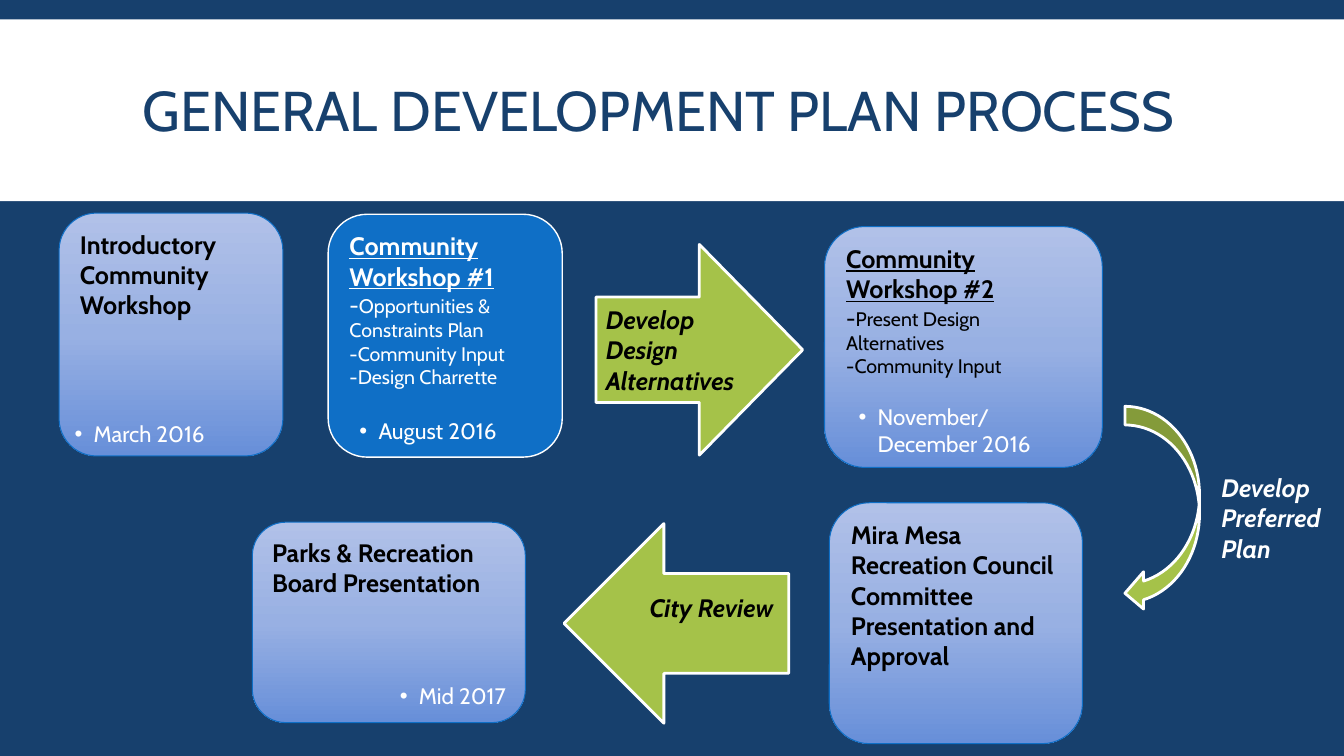
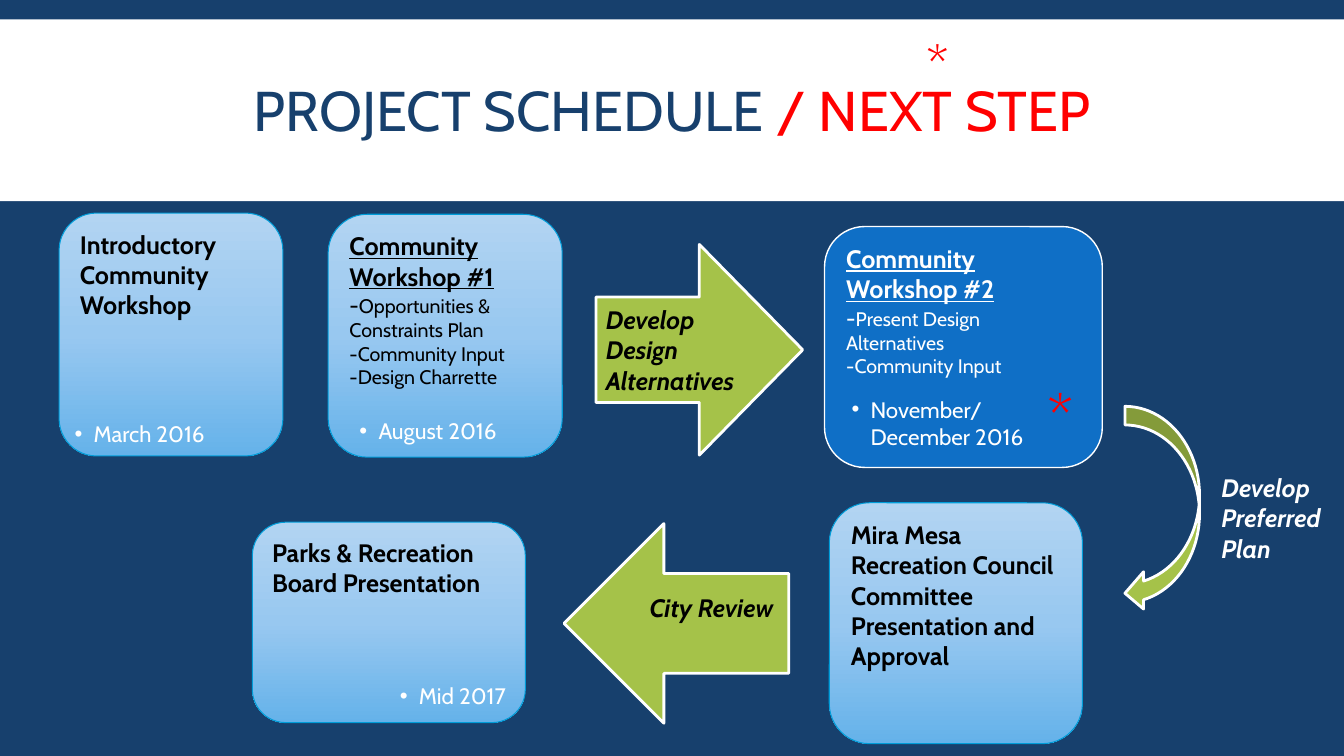
from copy import deepcopy

from pptx import Presentation
from pptx.dml.color import RGBColor
from pptx.enum.shapes import MSO_SHAPE as SHAPE
from pptx.enum.text import MSO_ANCHOR as ANCHOR, PP_ALIGN as ALIGN
from pptx.oxml.ns import qn
from pptx.util import Cm, Pt

FONT = "Cabin"
NAVY, BLUE, GREEN = "17406D", "0F6FC6", "A5C249"
WHITE, BLACK, RED = "FFFFFF", "000000", "FF0000"
SLIDE_W, SLIDE_H = 33.87, 19.05
BAND = (0, 0.49, SLIDE_W, 4.58)
TITLE = (3.35, 0.79, 27.18, 4.19)
TITLE_STAR = (23.09, 0.66, 1.17, 1.88)

STEPS = [
    ("Introductory Community Workshop", [], (1.49, 5.37, 5.64, 6.12)),
    ("Community Workshop #1",
     ["Opportunities & Constraints Plan", "Community Input", "Design Charrette"],
     (8.27, 5.4, 5.9, 6.12)),
    ("Community Workshop #2", ["Present Design Alternatives", "Community Input"],
     (20.78, 5.71, 7, 6.07)),
    ("Mira Mesa Recreation Council Committee Presentation and Approval", [],
     (20.9, 12.67, 6.38, 6.07)),
    ("Parks & Recreation Board Presentation", [], (6.36, 13.16, 6.88, 5.05)),
]
DATES = [
    ("March 2016", (1.63, 10.46, 4.3, 0.94)),
    ("August 2016", (8.81, 10.39, 4.3, 0.94)),
    ("Mid 2017", (9.83, 17.07, 3.7, 0.94)),
]
ARROWS = [
    (SHAPE.RIGHT_ARROW, (15.02, 6.16, 5.21, 5.31), 0, "Develop Design Alternatives"),
    (SHAPE.CURVED_LEFT_ARROW, (28.35, 10.24, 1.88, 5.18), 0, ""),
    (SHAPE.DOWN_ARROW, (14.53, 12.88, 5.03, 5.66), 90, ""),
]
LABELS = [
    ("City Review", BLACK, (16.12, 14.8, 3.63, 1.8)),
    ("Develop Preferred Plan", WHITE, (30.53, 11.78, 3.63, 2.57)),
]
SLIDES = [
    {"title": [("GENERAL DEVELOPMENT PLAN PROCESS", NAVY)], "align": ALIGN.LEFT,
     "current": "Community Workshop #1", "starred": False,
     "gradient": ("B1C1E8", "98B0E3", "678FD9"), "outline": BLUE,
     "second_date": (21.39, 10.03, 4.93, 1.63)},
    {"title": [("PROJECT SCHEDULE ", NAVY), ("/ NEXT STEP", RED)], "align": ALIGN.CENTER,
     "current": "Community Workshop #2", "starred": True,
     "gradient": ("B2D4F2", "98C8F0", "65B2EA"), "outline": "009DD9",
     "second_date": (21.21, 9.85, 4.93, 1.63)},
]


def rgb(value):
    return RGBColor.from_string(value)


def add_run(p, text, size, color, bold=False, italic=False, underline=False):
    r = p.add_run()
    r.text = text
    f = r.font
    f.name, f.size, f.color.rgb = FONT, Pt(size), rgb(color)
    f.bold, f.italic, f.underline = bold, italic, underline


def add_shape(s, kind, box, fill, line=None, width=1):
    sp = s.shapes.add_shape(kind, *map(Cm, box))
    sp.shadow.inherit = False
    if isinstance(fill, str):
        sp.fill.solid()
        sp.fill.fore_color.rgb = rgb(fill)
    else:
        fill_gradient(sp, fill)
    if line:
        sp.line.color.rgb = rgb(line)
        sp.line.width = Pt(width)
    else:
        sp.line.fill.background()
    sp.text_frame.paragraphs[0].alignment = ALIGN.LEFT
    return sp


def fill_gradient(sp, colors):
    sp.fill.gradient()
    sp.fill.gradient_angle = 270
    stop_list = next(sp._element.spPr.iter(qn("a:gsLst")))
    stop_list.append(deepcopy(stop_list[0]))
    for i, (stop, color) in enumerate(zip(sp.fill.gradient_stops, colors)):
        stop.position = i / (len(colors) - 1)
        stop.color.rgb = rgb(color)


def add_text(s, box):
    tf = s.shapes.add_textbox(*map(Cm, box)).text_frame
    tf.word_wrap = True
    return tf


def add_title(s, runs, align):
    add_shape(s, SHAPE.RECTANGLE, BAND, WHITE)
    tf = add_text(s, TITLE)
    tf.vertical_anchor = ANCHOR.MIDDLE
    p = tf.paragraphs[0]
    p.alignment, p.line_spacing = align, 0.85
    for text, color in runs:
        add_run(p, text, 40, color)


def add_step(s, step, look):
    heading, details, box = step
    current = heading == look["current"]
    color = WHITE if current else BLACK
    if current:
        sp = add_shape(s, SHAPE.ROUNDED_RECTANGLE, box, BLUE, WHITE)
    else:
        sp = add_shape(s, SHAPE.ROUNDED_RECTANGLE, box, look["gradient"], look["outline"], 0.75)
    tf = sp.text_frame
    tf.vertical_anchor = ANCHOR.TOP
    add_run(tf.paragraphs[0], heading, 18, color, bold=True, underline=bool(details))
    for i, detail in enumerate(details):
        p = tf.add_paragraph()
        p.alignment = ALIGN.LEFT
        add_run(p, "-", 14 if i else 16, color)
        add_run(p, detail, 14, color)
    if current and look["starred"]:
        p = tf.add_paragraph()
        p.alignment = ALIGN.LEFT
        p._p.get_or_add_pPr().set("marL", str(Cm(5.08)))
        add_run(p, "*", 44, RED)


def add_date(s, text, box):
    p = add_text(s, box).paragraphs[0]
    pPr = p._p.get_or_add_pPr()
    pPr.set("marL", str(Cm(0.48)))
    pPr.set("indent", str(-Cm(0.48)))
    bullet_font = pPr.makeelement(qn("a:buFont"), {"typeface": "Arial"})
    bullet = pPr.makeelement(qn("a:buChar"), {"char": "•"})
    pPr.extend([bullet_font, bullet])
    add_run(p, text, 16, WHITE)


def add_arrow(s, kind, box, rotation, text):
    sp = add_shape(s, kind, box, GREEN, WHITE, 2)
    sp.rotation = rotation
    if text:
        add_run(sp.text_frame.paragraphs[0], text, 18, BLACK, bold=True, italic=True)


def build_slide(prs, look):
    s = prs.slides.add_slide(prs.slide_layouts[6])
    s.background.fill.solid()
    s.background.fill.fore_color.rgb = rgb(NAVY)
    add_title(s, look["title"], look["align"])
    for step in STEPS:
        add_step(s, step, look)
    for date in DATES + [("November/ December 2016", look["second_date"])]:
        add_date(s, *date)
    for arrow in ARROWS:
        add_arrow(s, *arrow)
    for text, color, box in LABELS:
        add_run(add_text(s, box).paragraphs[0], text, 18, color, bold=True, italic=True)
    if look["starred"]:
        add_run(add_text(s, TITLE_STAR).paragraphs[0], "*", 38, RED)


def main():
    prs = Presentation()
    prs.slide_width, prs.slide_height = Cm(SLIDE_W), Cm(SLIDE_H)
    for look in SLIDES:
        build_slide(prs, look)
    prs.save("out.pptx")


if __name__ == "__main__":
    main()
